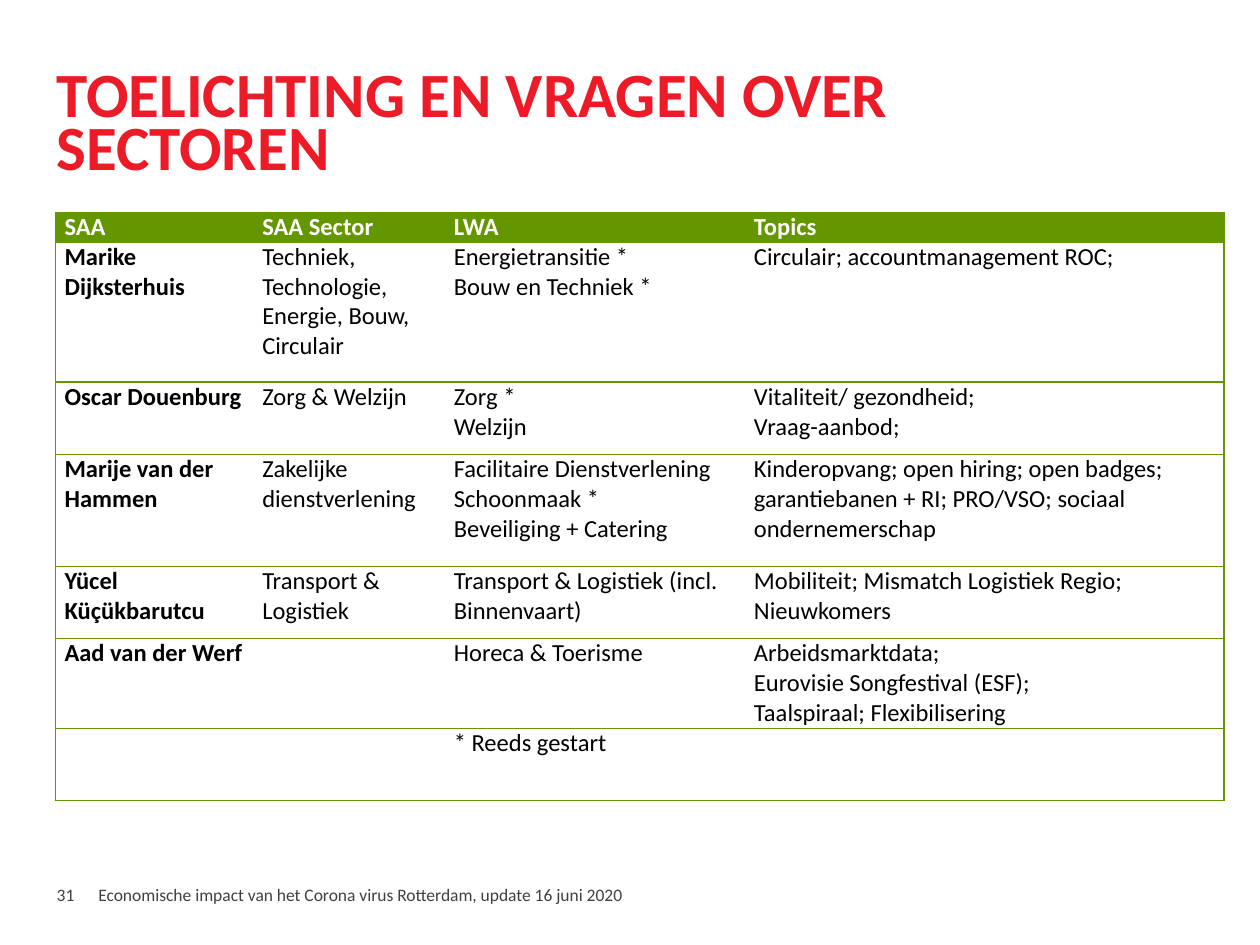
"""Build the slide with the sector table of account managers and topics."""
import pptx
import pptx.dml.color
import pptx.enum.text
import pptx.oxml
import pptx.oxml.ns
import pptx.util

Pt = pptx.util.Pt
Anchor = pptx.enum.text.MSO_ANCHOR
COLORS = {"title": "EC1B27", "green": "649600", "head": "FFFFFF",
          "text": "000000", "foot": "404040"}
WIDTHS = [113, 109.5, 171.5, 274]
HEIGHTS = [17, 80, 41.5, 64, 41, 51.5, 41]
ROWS = [
    ["SAA", "SAA Sector", "LWA", "Topics"],
    ["Marike Dijksterhuis", "Techniek, Technologie, Energie, Bouw, Circulair",
     "Energietransitie *\nBouw en Techniek *", "Circulair; accountmanagement ROC;"],
    ["Oscar Douenburg", "Zorg & Welzijn", "Zorg *\nWelzijn",
     "Vitaliteit/ gezondheid;\nVraag-aanbod;"],
    ["Marije van der Hammen", "Zakelijke dienstverlening",
     "Facilitaire Dienstverlening Schoonmaak *\nBeveiliging + Catering",
     "Kinderopvang; open hiring; open badges; garantiebanen + RI; PRO/VSO; "
     "sociaal ondernemerschap"],
    ["Yücel Küçükbarutcu", "Transport & Logistiek",
     "Transport & Logistiek (incl. Binnenvaart)",
     "Mobiliteit; Mismatch Logistiek Regio;\nNieuwkomers"],
    ["Aad van der Werf", "", "Horeca & Toerisme",
     "Arbeidsmarktdata;\nEurovisie Songfestival (ESF);\nTaalspiraal; Flexibilisering"],
    ["", "", "* Reeds gestart", ""],
]


class Deck:
    """Hold the style and the current slide."""

    def __init__(self):
        self.show = pptx.Presentation()
        self.show.slide_width, self.show.slide_height = Pt(720), Pt(540)
        self.slide = self.show.slides.add_slide(self.show.slide_layouts[5])
        self.face = "Calibri"

    def color(self, name):
        return pptx.dml.color.RGBColor.from_string(COLORS[name])

    def words(self, frame, text, size, name, bold=False):
        frame.text = text
        for para in frame.paragraphs:
            font = para.font
            font.name, font.size, font.bold = self.face, Pt(size), bold
            font.color.rgb = self.color(name)

    def frame(self, shape, box, anchor):
        shape.left, shape.top, shape.width, shape.height = map(Pt, box)
        frame = shape.text_frame
        frame.margin_left = frame.margin_right = 0
        frame.margin_top = frame.margin_bottom = 0
        frame.word_wrap = True
        frame.auto_size = pptx.enum.text.MSO_AUTO_SIZE.NONE
        frame.vertical_anchor = anchor
        return frame

    def title(self, text, box):
        frame = self.frame(self.slide.shapes.title, box, Anchor.TOP)
        self.words(frame, text, 36, "title", True)
        para = frame.paragraphs[0]
        para.alignment = pptx.enum.text.PP_ALIGN.LEFT
        para.line_spacing = 0.7

    def label(self, text, box):
        shape = self.slide.shapes.add_textbox(*map(Pt, box))
        self.words(self.frame(shape, box, Anchor.MIDDLE), text, 10, "foot")

    def border(self, cell, sides):
        props = cell._tc.get_or_add_tcPr()
        space = pptx.oxml.ns.nsdecls("a")
        solid = f'<a:solidFill><a:srgbClr val="{COLORS["green"]}"/></a:solidFill>'
        for side in "LRTB":
            fill = solid if side in sides else "<a:noFill/>"
            props.append(pptx.oxml.parse_xml(
                f'<a:ln{side} {space} w="{Pt(0.75)}">{fill}</a:ln{side}>'))

    def table(self, rows, left, top):
        box = (left, top, sum(WIDTHS), sum(HEIGHTS))
        shape = self.slide.shapes.add_table(len(rows), len(WIDTHS), *map(Pt, box))
        table = shape.table
        table.first_row = table.horz_banding = False
        for col, width in zip(table.columns, WIDTHS):
            col.width = Pt(width)
        for r, (row, height) in enumerate(zip(rows, HEIGHTS)):
            table.rows[r].height = Pt(height)
            for c, text in enumerate(row):
                self.cell(table.cell(r, c), text, r == 0, c)

    def cell(self, cell, text, head, col):
        cell.margin_left = cell.margin_right = Pt(5.4)
        cell.margin_top = cell.margin_bottom = 0
        edge = {0: "L", len(WIDTHS) - 1: "R"}.get(col, "")
        self.border(cell, "TB" + edge)
        if head:
            cell.fill.solid()
            cell.fill.fore_color.rgb = self.color("green")
        else:
            cell.fill.background()
        self.words(cell.text_frame, text, 14, "head" if head else "text",
                   head or col == 0)


def main():
    deck = Deck()
    deck.title("TOELICHTING EN VRAGEN OVER SECTOREN", (32.4, 43.2, 514.8, 60.5))
    deck.label("Economische impact van het Corona virus Rotterdam, update 16 juni 2020",
               (56.2, 504.7, 380, 13))
    deck.label("31", (32.4, 504.7, 22.3, 13))
    deck.table(ROWS, 31.5, 121.2)
    deck.show.save("out.pptx")


if __name__ == "__main__":
    main()
